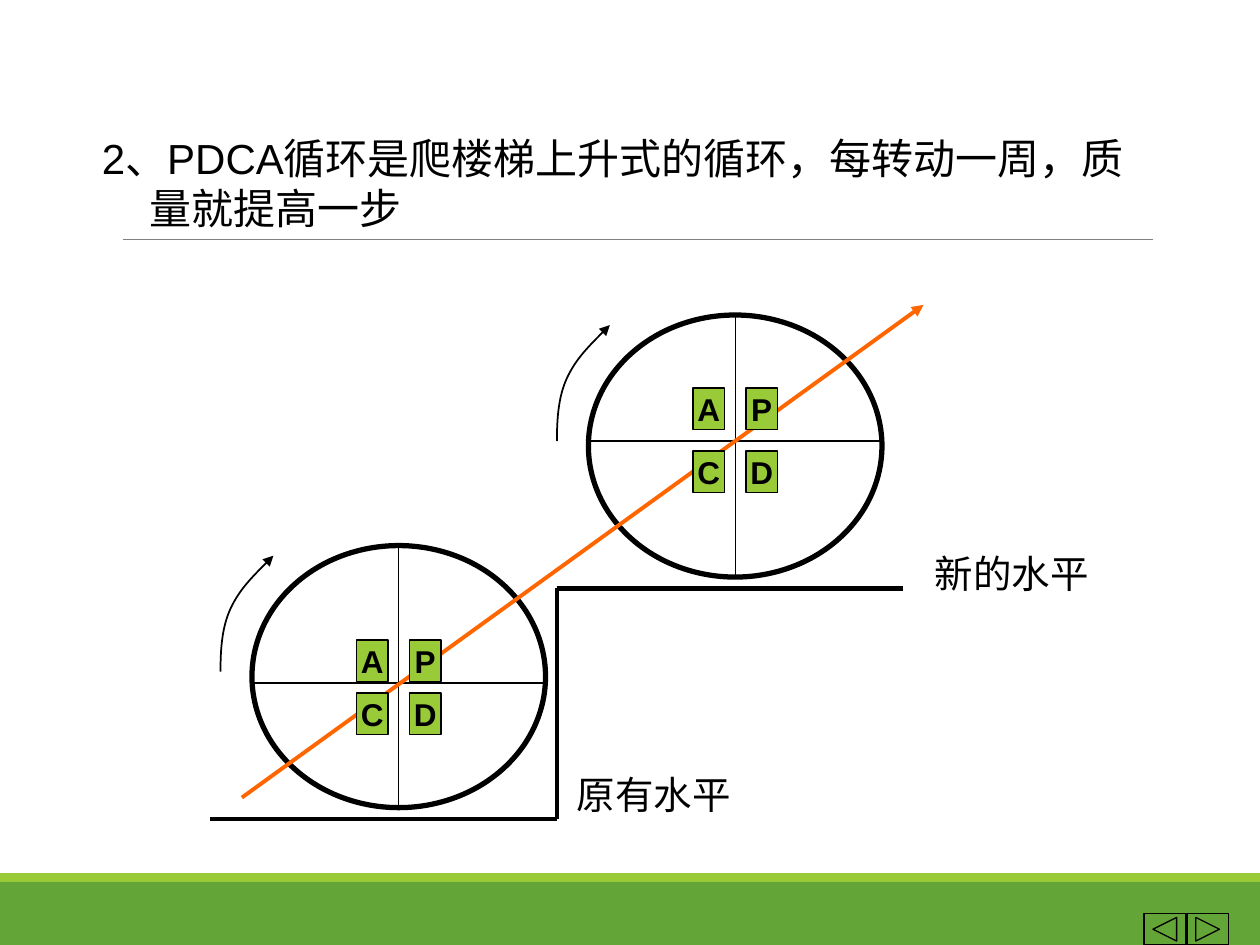
from dataclasses import dataclass

from lxml import etree
from pptx import Presentation
from pptx.dml.color import RGBColor
from pptx.enum.shapes import MSO_CONNECTOR, MSO_SHAPE
from pptx.enum.text import MSO_ANCHOR, PP_ALIGN
from pptx.oxml.ns import qn
from pptx.util import Inches, Pt

STRAIGHT = MSO_CONNECTOR.STRAIGHT
RECTANGLE = MSO_SHAPE.RECTANGLE
OVAL = MSO_SHAPE.OVAL
BACK = MSO_SHAPE.ACTION_BUTTON_BACK_OR_PREVIOUS
FORWARD = MSO_SHAPE.ACTION_BUTTON_FORWARD_OR_NEXT
MIDDLE = MSO_ANCHOR.MIDDLE
CENTER = PP_ALIGN.CENTER


@dataclass(frozen=True)
class Theme:
    font: str = "Arial"
    black: RGBColor = RGBColor(0x00, 0x00, 0x00)
    gray: RGBColor = RGBColor(0x80, 0x80, 0x80)
    green: RGBColor = RGBColor(0x63, 0xA5, 0x37)
    lime: RGBColor = RGBColor(0x99, 0xCB, 0x38)
    orange: RGBColor = RGBColor(0xFF, 0x66, 0x00)
    title: Pt = Pt(24)
    label: Pt = Pt(22)
    letter: Pt = Pt(18)


theme = Theme()
deck = Presentation()
deck.slide_width, deck.slide_height = Inches(10), Inches(7.5)
page = deck.slides.add_slide(deck.slide_layouts[6])


def add_line(start, end, color, width, arrow=False):
    line = page.shapes.add_connector(
        STRAIGHT, *(Inches(value) for value in (*start, *end)))
    line.line.color.rgb = color
    line.line.width = Pt(width)
    properties = line._element.spPr
    if arrow:
        etree.SubElement(properties.find(qn("a:ln")), qn("a:tailEnd"), type="triangle")
    etree.SubElement(properties, qn("a:effectLst"))


def add_box(kind, left, top, width, height, fill=None, outline=None):
    box = page.shapes.add_shape(
        kind, Inches(left), Inches(top), Inches(width), Inches(height))
    box.shadow.inherit = False
    if fill is None:
        box.fill.background()
    else:
        box.fill.solid()
        box.fill.fore_color.rgb = fill
    if outline is None:
        box.line.fill.background()
    else:
        box.line.color.rgb = theme.black
        box.line.width = Pt(outline)
    return box


# Footer bands and title rule
add_box(RECTANGLE, 0, 7, 10, 0.5, theme.green)
add_box(RECTANGLE, 0, 6.93, 10, 0.07, theme.lime)
add_line((0.98, 1.9), (9.15, 1.9), theme.gray, 0.5)

# Title and level labels: text, left, top, width, height, size, hanging indent
texts = [
    ("2、PDCA循环是爬楼梯上升式的循环，每转动一周，质量就提高一步",
     0.71, 1, 8.38, 5.17, theme.title, 0.38),
    ("原有水平", 4.48, 6.07, 1.42, 0.47, theme.label, 0),
    ("新的水平", 7.32, 4.32, 1.42, 0.47, theme.label, 0),
]
for text, left, top, width, height, size, indent in texts:
    box = page.shapes.add_textbox(
        Inches(left), Inches(top), Inches(width), Inches(height))
    box.text_frame.word_wrap = indent > 0
    para = box.text_frame.paragraphs[0]
    para.text = text
    para.font.name = theme.font
    para.font.size = size
    para.font.color.rgb = theme.black
    if indent:
        para_format = para._p.get_or_add_pPr()
        para_format.set("marL", str(Inches(indent)))
        para_format.set("indent", str(-Inches(indent)))

# Stair steps
stairs = [(1.67, 6.5), (4.42, 6.5), (4.42, 4.67), (7.17, 4.67)]
for start, end in zip(stairs, stairs[1:]):
    add_line(start, end, theme.black, 2.5)

# Wheels with their cross lines: left, top, cross height, letter row tops
wheel_width, wheel_height = 2.33, 2.08
wheels = [(2, 4.33, 5.42, (5.08, 5.5)), (4.67, 2.5, 3.5, (3.08, 3.58))]
for left, top, cross, rows in wheels:
    add_box(OVAL, left, top, wheel_width, wheel_height, outline=3)
    middle = left + wheel_width / 2
    add_line((left, cross), (left + wheel_width, cross), theme.black, 0.75)
    add_line((middle, top), (middle, top + wheel_height), theme.black, 0.75)

# Rising arrow through both wheels
add_line((1.92, 6.33), (7.33, 2.42), theme.orange, 2.25, arrow=True)

# Rotation arrows: two Bezier segments, relative to the start point
curve = [(0, -0.17), (0.01, -0.35), (0.08, -0.5),
         (0.15, -0.65), (0.28, -0.78), (0.42, -0.92)]
for left, top, cross, rows in wheels:
    x, y = left - 0.25, top + 1
    builder = page.shapes.build_freeform(Inches(x), Inches(y))
    builder.add_line_segments(
        [(Inches(x + dx), Inches(y + dy)) for dx, dy in curve], close=False)
    arc = builder.convert_to_shape()
    arc.shadow.inherit = False
    arc.fill.background()
    arc.line.color.rgb = theme.black
    arc.line.width = Pt(1)
    etree.SubElement(arc.line._get_or_add_ln(), qn("a:tailEnd"), type="triangle")
    # Fold every three straight segments into one cubic curve
    segments = list(arc._element.iter(qn("a:lnTo")))
    outline = segments[0].getparent()
    for first in range(0, len(segments), 3):
        cubic = etree.SubElement(outline, qn("a:cubicBezTo"))
        for segment in segments[first:first + 3]:
            cubic.append(segment[0])
            outline.remove(segment)

# Letters around each hub
for left, top, cross, rows in wheels:
    for row_top, letters in zip(rows, ("AP", "CD")):
        for column, letter in enumerate(letters):
            box = add_box(RECTANGLE, left + 0.83 + 0.42 * column, row_top,
                          0.25, 0.33, theme.lime, 0.75)
            box.text_frame.word_wrap = False
            box.text_frame.vertical_anchor = MIDDLE
            para = box.text_frame.paragraphs[0]
            para.text = letter
            para.alignment = CENTER
            para.font.name = theme.font
            para.font.size = theme.letter
            para.font.bold = True
            para.font.color.rgb = theme.black

# Navigation buttons
for left, kind in ((9.08, BACK), (9.42, FORWARD)):
    add_box(kind, left, 7.25, 0.33, 0.25, outline=0.75)

deck.save("out.pptx")
